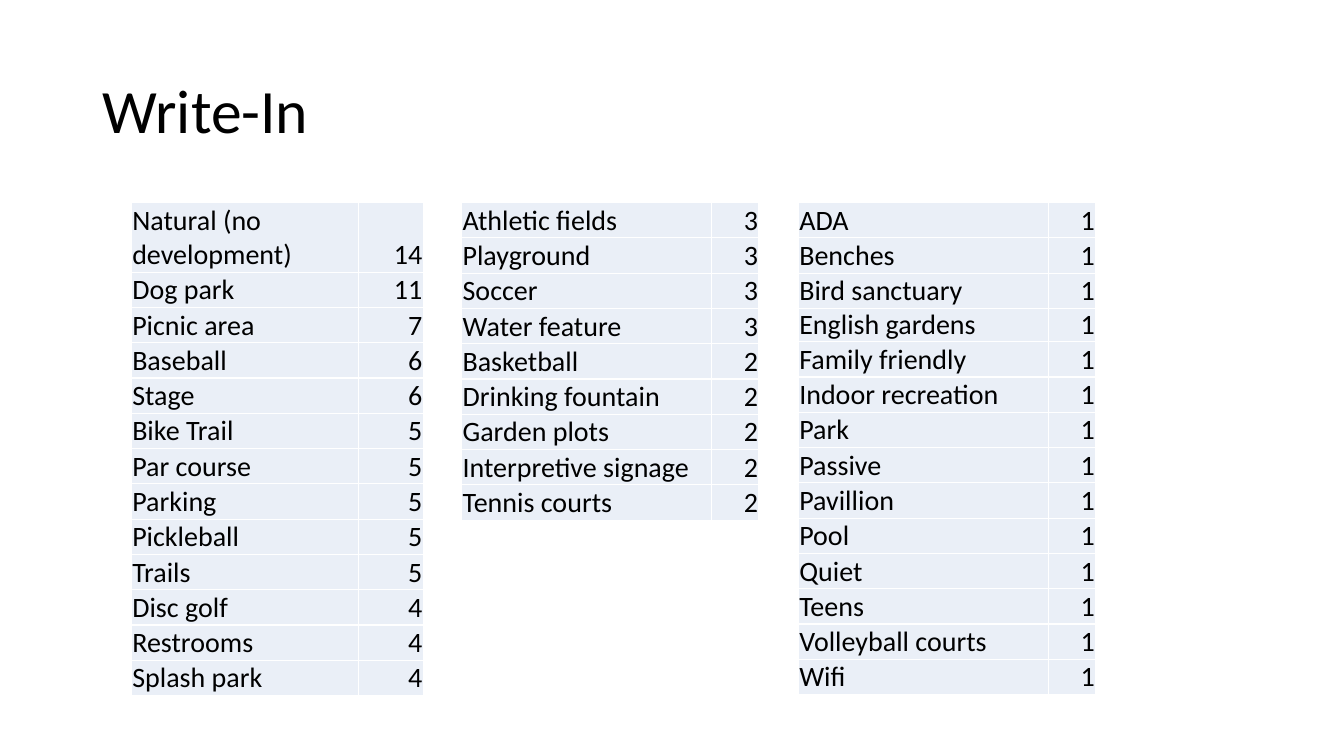
from lxml.etree import SubElement as Sub
from pptx import Presentation
from pptx.dml.color import RGBColor as RGB
from pptx.enum.text import MSO_ANCHOR as Anchor, PP_ALIGN as Align
from pptx.oxml.ns import qn
from pptx.util import Pt

HUES = {"text": "000000", "cell": "EAEFF7", "rule": "FFFFFF"}
FONT = "Calibri"
TOP, ROW = 144.72, 24.72
WIDE = (178.56, 33.84)

MAIN = [
    ("Natural (no development)", 14), ("Dog park", 11), ("Picnic area", 7),
    ("Baseball", 6), ("Stage", 6), ("Bike Trail", 5), ("Par course", 5),
    ("Parking", 5), ("Pickleball", 5), ("Trails", 5), ("Disc golf", 4),
    ("Restrooms", 4), ("Splash park", 4),
]
SOME = [
    ("Athletic fields", 3), ("Playground", 3), ("Soccer", 3),
    ("Water feature", 3), ("Basketball", 2), ("Drinking fountain", 2),
    ("Garden plots", 2), ("Interpretive signage", 2), ("Tennis courts", 2),
]
ONCE = [(name, 1) for name in (
    "English gardens", "Family friendly", "Indoor recreation", "Park",
    "Passive", "Pavillion", "Pool", "Quiet", "Teens", "Volleyball courts",
    "Wifi",
)]
FIRST = [(name, 1) for name in ("ADA", "Benches", "Bird sanctuary")]


class Deck:
    """Holds the style and the current slide, and adds its elements."""

    def __init__(self):
        self.prs = Presentation()
        self.prs.slide_width, self.prs.slide_height = Pt(960), Pt(540)
        self.slide = self.prs.slides.add_slide(self.prs.slide_layouts[5])

    def style(self, para, size, align):
        para.alignment = align
        para.font.name, para.font.size = FONT, Pt(size)
        para.font.color.rgb = RGB.from_string(HUES["text"])

    def title(self, text, left, top, width, height):
        box = self.slide.shapes.title
        box.left, box.top = Pt(left), Pt(top)
        box.width, box.height = Pt(width), Pt(height)
        frame = box.text_frame
        frame.text = text
        frame.vertical_anchor = Anchor.MIDDLE
        para = frame.paragraphs[0]
        para.line_spacing = 0.9
        self.style(para, 44, Align.LEFT)

    def cell(self, cell, text, align):
        cell.text = str(text)
        cell.vertical_anchor = Anchor.BOTTOM
        cell.margin_left = cell.margin_right = cell.margin_top = Pt(0.7)
        cell.margin_bottom = Pt(0)
        self.style(cell.text_frame.paragraphs[0], 20, align)
        self.rules(cell)
        cell.fill.solid()
        cell.fill.fore_color.rgb = RGB.from_string(HUES["cell"])

    def rules(self, cell):
        props = cell._tc.get_or_add_tcPr()
        for side in ("lnL", "lnR", "lnT", "lnB"):
            line = Sub(props, qn(f"a:{side}"), w=str(Pt(1)))
            fill = Sub(line, qn("a:solidFill"))
            Sub(fill, qn("a:srgbClr"), val=HUES["rule"])

    def table(self, items, left, top=TOP, cols=WIDE, lines=1):
        size = Pt(sum(cols)), Pt(ROW * (len(items) + lines - 1))
        frame = self.slide.shapes.add_table(
            len(items), 2, Pt(left), Pt(top), *size)
        table = frame.table
        table.first_row = table.horz_banding = False
        for col, width in zip(table.columns, cols):
            col.width = Pt(width)
        for i, (name, votes) in enumerate(items):
            table.rows[i].height = Pt(ROW if i else ROW * lines)
            self.cell(table.cell(i, 0), name, Align.LEFT)
            self.cell(table.cell(i, 1), votes, Align.RIGHT)

    def save(self):
        self.prs.save("out.pptx")


def main():
    deck = Deck()
    deck.title("Write-In", 66, 28.75, 828, 104.4)
    deck.table(MAIN, 93.8, cols=(162, 46.5), lines=2)
    deck.table(ONCE, 570.24, top=TOP + ROW * len(FIRST))
    deck.table(SOME, 329.76)
    deck.table(FIRST, 570.24)
    deck.save()


if __name__ == "__main__":
    main()
